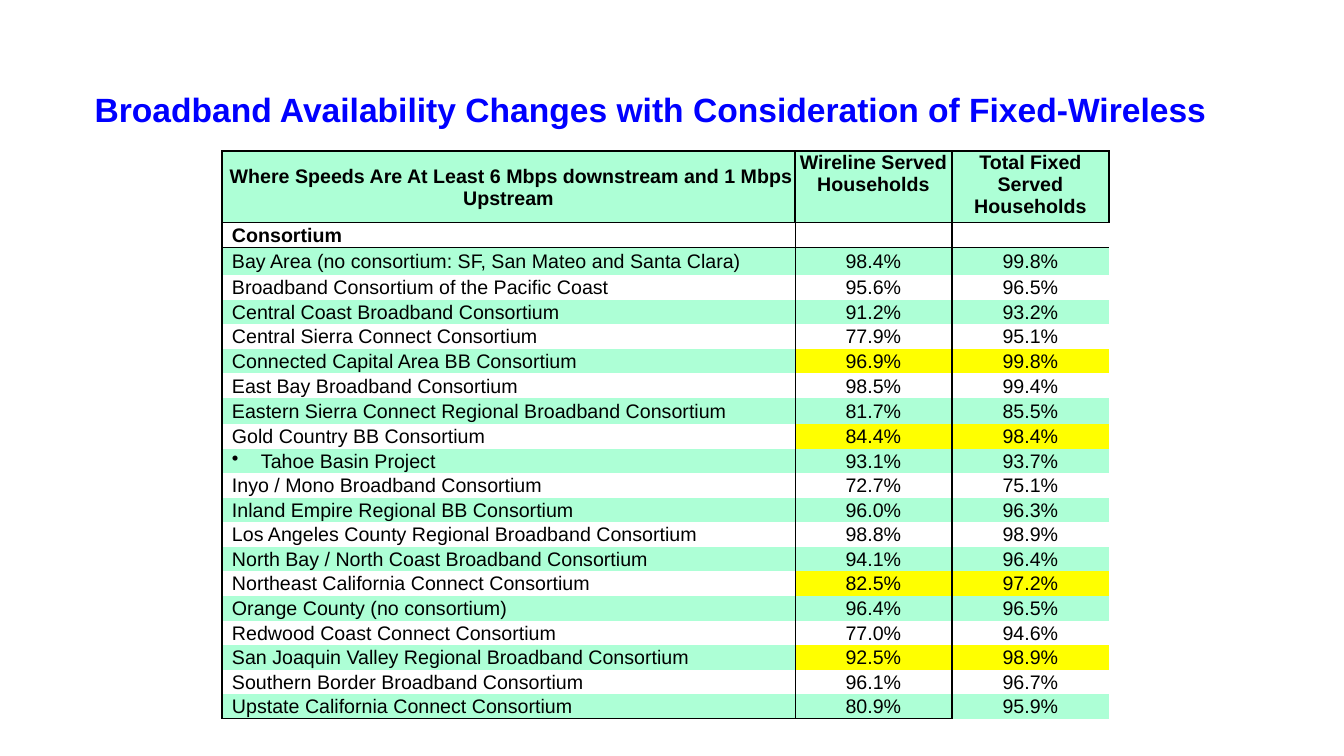
from lxml import etree
from pptx import Presentation
from pptx import util as u
from pptx.dml.color import RGBColor
from pptx.enum import text
from pptx.oxml import ns

PX = 914400 / 100.8
FONT = "Arial"
BLACK, BLUE, WHITE, MINT, YELLOW = "000000", "0000FF", "FFFFFF", "ADFFD6", "FFFF00"
NO_STYLE = "{2D5ABB26-0587-4C30-8999-92F81FD0307C}"

TITLE = "Broadband Availability Changes with Consideration of Fixed-Wireless"
HEADERS = (" Where Speeds Are At Least 6 Mbps downstream and 1 Mbps Upstream",
           "Wireline Served Households", "Total Fixed Served Households")
CONSORTIA = [
    ("Bay Area (no consortium: SF, San Mateo and Santa Clara)", "98.4%", "99.8%"),
    ("Broadband Consortium of the Pacific Coast", "95.6%", "96.5%"),
    ("Central Coast Broadband Consortium", "91.2%", "93.2%"),
    ("Central Sierra Connect Consortium", "77.9%", "95.1%"),
    ("Connected Capital Area BB Consortium", "96.9%", "99.8%"),
    ("East Bay Broadband Consortium", "98.5%", "99.4%"),
    ("Eastern Sierra Connect Regional Broadband Consortium", "81.7%", "85.5%"),
    ("Gold Country BB Consortium", "84.4%", "98.4%"),
    ("Tahoe Basin Project", "93.1%", "93.7%"),
    ("Inyo / Mono Broadband Consortium", "72.7%", "75.1%"),
    ("Inland Empire Regional BB Consortium", "96.0%", "96.3%"),
    ("Los Angeles County Regional Broadband Consortium", "98.8%", "98.9%"),
    ("North Bay / North Coast Broadband Consortium", "94.1%", "96.4%"),
    ("Northeast California Connect Consortium", "82.5%", "97.2%"),
    ("Orange County (no consortium)", "96.4%", "96.5%"),
    ("Redwood Coast Connect Consortium", "77.0%", "94.6%"),
    ("San Joaquin Valley Regional Broadband Consortium", "92.5%", "98.9%"),
    ("Southern Border Broadband Consortium", "96.1%", "96.7%"),
    ("Upstate California Connect Consortium", "80.9%", "95.9%"),
]
ROWS = [HEADERS, ("Consortium", "", "")] + CONSORTIA
HIGHLIGHTED = {"Connected Capital Area BB Consortium", "Gold Country BB Consortium",
               "Northeast California Connect Consortium",
               "San Joaquin Valley Regional Broadband Consortium"}
BULLETED = "Tahoe Basin Project"
COLUMN_WIDTHS = (573, 157, 157)
ROW_HEIGHT = 24
TALL_ROWS = {0: 67, 2: 28, 8: 26}


def px(length):
    return u.Emu(round(length * PX))


def color(hex_string):
    return RGBColor.from_string(hex_string)


def style_paragraph(paragraph, size, hex_string, bold, centered):
    paragraph.alignment = text.PP_ALIGN.CENTER if centered else text.PP_ALIGN.LEFT
    font = paragraph.font
    font.name, font.size, font.bold = FONT, u.Pt(size), bold
    font.color.rgb = color(hex_string)


def add_bullet(paragraph, indent):
    properties = paragraph._p.get_or_add_pPr()
    properties.set("marL", str(px(indent)))
    properties.set("indent", str(-px(indent)))
    etree.SubElement(properties, ns.qn("a:buChar")).set("char", "•")


def set_borders(cell, widths):
    """Draw the left, right, top and bottom borders; a width of 0 means none."""
    properties = cell._tc.get_or_add_tcPr()
    for side, width in zip("LRTB", widths):
        line = etree.SubElement(properties, ns.qn(f"a:ln{side}"), w=str(u.Pt(width)))
        if width:
            fill = etree.SubElement(line, ns.qn("a:solidFill"))
            etree.SubElement(fill, ns.qn("a:srgbClr"), val=BLACK)
        else:
            etree.SubElement(line, ns.qn("a:noFill"))


def border_widths(row, column):
    header, last = row == 0, row == len(ROWS) - 1
    left = 1 if header else (1, 0.5, 1)[column]
    right = 1 if header else (0.5, 1, 0)[column]
    top = 1 if row <= 2 else 0
    bottom = 1 if row <= 1 or (last and column < 2) else 0
    return left, right, top, bottom


def fill_cell(cell, row, column):
    label, wording = ROWS[row][0], ROWS[row][column]
    header, name_cell = row == 0, row > 0 and column == 0

    # Borders and background
    set_borders(cell, border_widths(row, column))
    background = MINT if row % 2 == 0 else WHITE
    if column and label in HIGHLIGHTED:
        background = YELLOW
    cell.fill.solid()
    cell.fill.fore_color.rgb = color(background)

    # Text
    cell.margin_left = px(10 if name_cell else 1)
    cell.margin_right = cell.margin_top = px(1)
    cell.margin_bottom = 0
    top_anchored = header and column > 0
    cell.vertical_anchor = text.MSO_ANCHOR.TOP if top_anchored else text.MSO_ANCHOR.MIDDLE
    paragraph = cell.text_frame.paragraphs[0]
    if wording:
        paragraph.add_run().text = wording
    if wording == BULLETED:
        add_bullet(paragraph, 29)
    style_paragraph(paragraph, 14, BLACK, row < 2, not name_cell)
    if not wording:
        etree.SubElement(paragraph._p, ns.qn("a:endParaRPr"), sz="1400")


def add_title(slide, left, top, width, height):
    shape = slide.shapes.add_textbox(px(left), px(top), px(width), px(height))
    frame = shape.text_frame
    frame.word_wrap = True
    frame.vertical_anchor = text.MSO_ANCHOR.MIDDLE
    paragraph = frame.paragraphs[0]
    paragraph.add_run().text = TITLE
    style_paragraph(paragraph, 24, BLUE, True, True)


def add_availability_table(slide, left, top):
    heights = [TALL_ROWS.get(row, ROW_HEIGHT) for row in range(len(ROWS))]
    shape = slide.shapes.add_table(len(ROWS), len(HEADERS), px(left), px(top),
                                   px(sum(COLUMN_WIDTHS)), px(sum(heights)))
    table = shape.table
    table.first_row = table.horz_banding = False
    table._tbl.tblPr.find(ns.qn("a:tableStyleId")).text = NO_STYLE
    for column, width in enumerate(COLUMN_WIDTHS):
        table.columns[column].width = px(width)
    for row, height in enumerate(heights):
        table.rows[row].height = px(height)
        for column in range(len(HEADERS)):
            fill_cell(table.cell(row, column), row, column)


def main():
    presentation = Presentation()
    presentation.slide_width, presentation.slide_height = px(1344), px(756)
    slide = presentation.slides.add_slide(presentation.slide_layouts[6])
    add_title(slide, 40, 83, 1221, 52)
    add_availability_table(slide, 222, 151)
    presentation.save("out.pptx")


if __name__ == "__main__":
    main()
